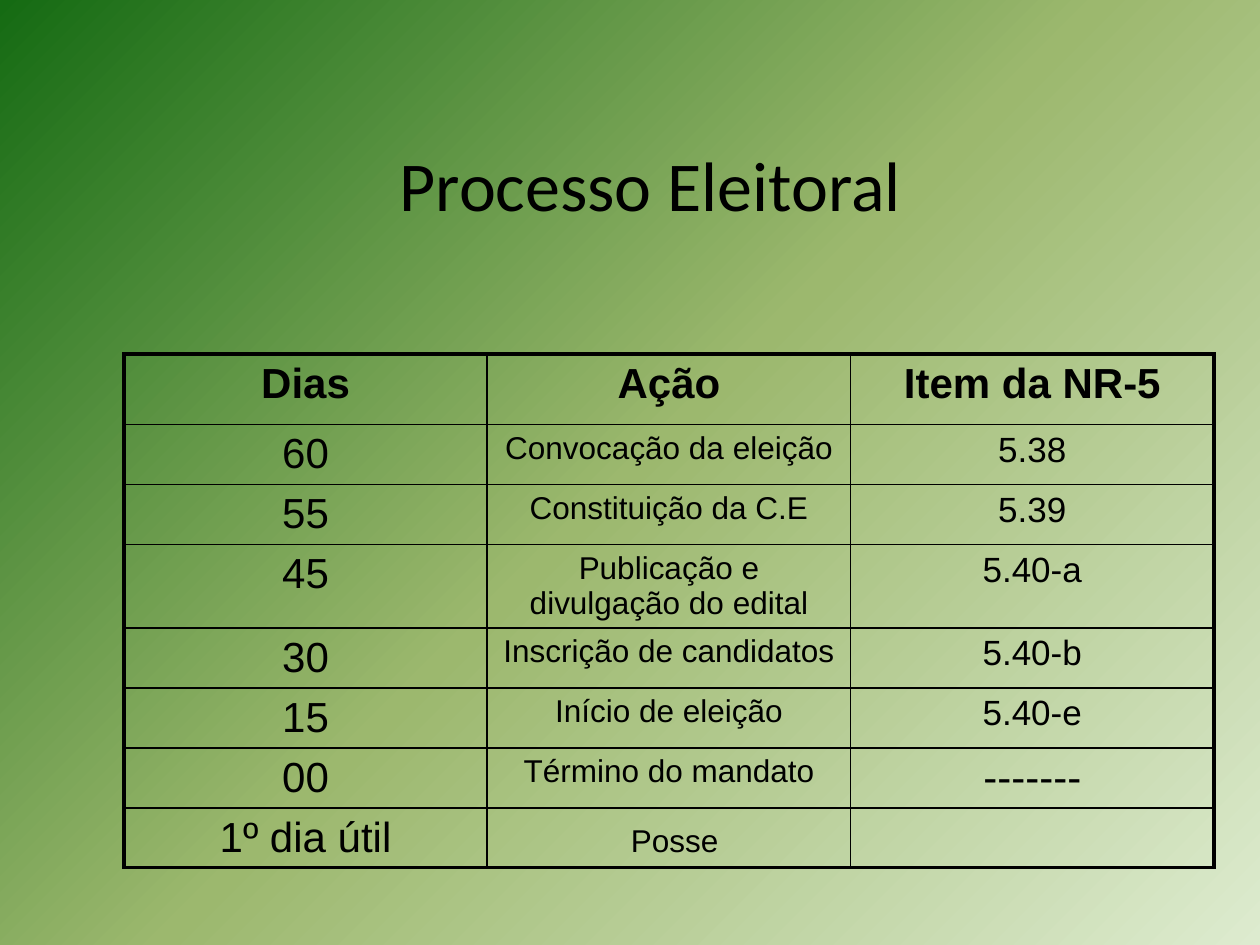
from copy import deepcopy

from lxml import etree
from pptx import Presentation
from pptx import util as u
from pptx.dml.color import RGBColor
from pptx.enum import text
from pptx.oxml import ns

BLACK = RGBColor(0x00, 0x00, 0x00)
GRADIENT = {
    0: RGBColor(0xDD, 0xEB, 0xCF),
    0.5: RGBColor(0x9C, 0xB8, 0x6E),
    1: RGBColor(0x15, 0x6B, 0x13),
}
OUTER, INNER = u.Pt(2.25), u.Pt(1)

STEPS = [
    ("Dias", "Ação", "Item da NR-5"),
    ("60", "Convocação da eleição", "5.38"),
    ("55", "Constituição da C.E", "5.39"),
    ("45", "Publicação e divulgação do edital", "5.40-a"),
    ("30", "Inscrição de candidatos", "5.40-b"),
    ("15", "Início de eleição", "5.40-e"),
    ("00", "Término do mandato", "-------"),
    ("1º dia útil", "Posse", ""),
]
ROW_HEIGHTS = [1.42, 1.21, 1.21, 1.42, 1.21, 1.21, 1.21, 0.97]
COLUMN_WIDTHS = [7.32, 7.33, 7.32]
COLUMN_SIZES = [24, 18, 20]


def add_run(paragraph, words, **font_values):
    run = paragraph.add_run()
    run.text = words
    run.font.color.rgb = BLACK
    for name, value in font_values.items():
        setattr(run.font, name, value)


def add_border(cell, side, width):
    """Draw one black side (L, R, T or B) of a cell."""
    line = etree.SubElement(cell._tc.get_or_add_tcPr(), ns.qn(f"a:ln{side}"), w=str(width))
    fill = etree.SubElement(line, ns.qn("a:solidFill"))
    etree.SubElement(fill, ns.qn("a:srgbClr"), val=str(BLACK))


prs = Presentation()
prs.slide_width, prs.slide_height = u.Cm(25.4), u.Cm(19.05)
slide = prs.slides.add_slide(prs.slide_layouts[5])

# Background: three-stop diagonal gradient
background = slide.background.fill
background.gradient()
background.gradient_angle = 135
stop_list = slide._element.xpath(".//p:bg//a:gsLst")[0]
stop_list.append(deepcopy(stop_list[0]))
for stop, (position, color) in zip(background.gradient_stops, GRADIENT.items()):
    stop.position = position
    stop.color.rgb = color

# Title
title = slide.shapes.title
title.left, title.top, title.width, title.height = u.Cm(2.1), u.Cm(2.1), u.Cm(22.02), u.Cm(3.18)
title.text_frame.vertical_anchor = text.MSO_ANCHOR.MIDDLE
heading = title.text_frame.paragraphs[0]
heading.alignment = text.PP_ALIGN.CENTER
add_run(heading, "Processo Eleitoral", name="Calibri", size=u.Pt(40))

# Election schedule
schedule = slide.shapes.add_table(
    len(STEPS), len(COLUMN_WIDTHS), u.Cm(2.5), u.Cm(7.14),
    u.Cm(sum(COLUMN_WIDTHS)), u.Cm(sum(ROW_HEIGHTS)),
).table
schedule.first_row = schedule.horz_banding = False
for column, width in zip(schedule.columns, COLUMN_WIDTHS):
    column.width = u.Cm(width)
for row, height in zip(schedule.rows, ROW_HEIGHTS):
    row.height = u.Cm(height)

last_row, last_col = len(STEPS) - 1, len(COLUMN_WIDTHS) - 1
for r, step in enumerate(STEPS):
    for c, words in enumerate(step):
        cell = schedule.cell(r, c)
        at_edge = {"L": c == 0, "R": c == last_col, "T": r == 0, "B": r == last_row}
        for side, is_outer in at_edge.items():
            add_border(cell, side, OUTER if is_outer else INNER)
        cell.fill.background()

        entry = cell.text_frame.paragraphs[0]
        entry.alignment = text.PP_ALIGN.CENTER
        spacing = etree.SubElement(entry._p.get_or_add_pPr(), ns.qn("a:spcBef"))
        etree.SubElement(spacing, ns.qn("a:spcPct"), val="20000")
        if words == "Posse":  # a larger space sets the height of this line
            add_run(entry, " ", name="Arial", size=u.Pt(24))
        if words:
            size = 24 if r == 0 or words == "-------" else COLUMN_SIZES[c]
            add_run(entry, words, name="Arial", size=u.Pt(size), bold=r == 0)

prs.save("out.pptx")
